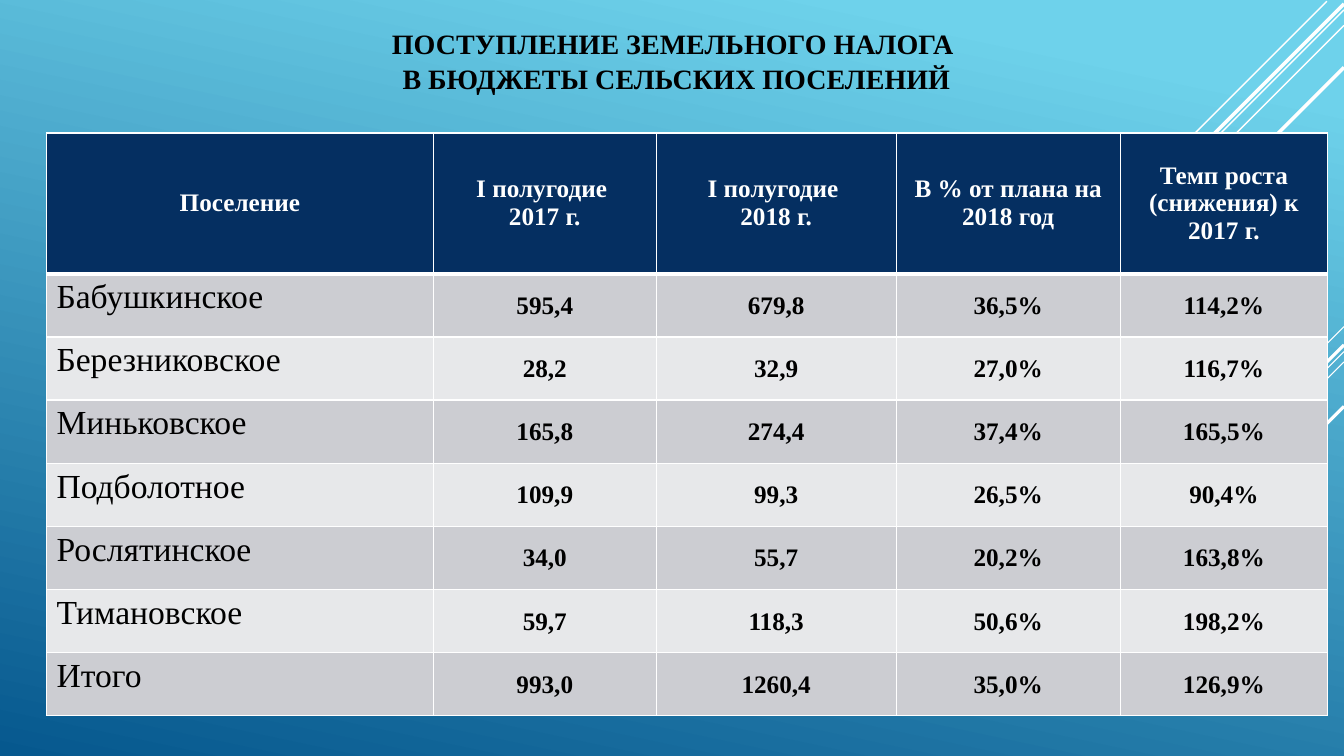
"""Build the slide on land tax receipts of rural settlements."""
import lxml.etree
import pptx
import pptx.dml.color
import pptx.enum.shapes
import pptx.enum.text
import pptx.oxml.ns
import pptx.util

Cm = pptx.util.Cm
Pt = pptx.util.Pt
Align = pptx.enum.text.PP_ALIGN
Anchor = pptx.enum.text.MSO_ANCHOR
qn = pptx.oxml.ns.qn

COLORS = {
    "sky": "6ED2EB",
    "sea": "06588E",
    "header": "052F61",
    "odd": "CCCDD2",
    "even": "E7E8EA",
    "white": "FFFFFF",
    "black": "000000",
}


def rgb(name):
    return pptx.dml.color.RGBColor.from_string(COLORS[name])


def write(frame, text, size=18, color="black", bold=True, align=Align.CENTER, spacing=1.0):
    for index, line in enumerate(text.split("\n")):
        para = frame.add_paragraph() if index else frame.paragraphs[0]
        para.alignment = align
        para.line_spacing = spacing
        span = para.add_run()
        span.text = line
        span.font.name = "Times New Roman"
        span.font.size = Pt(size)
        span.font.bold = bold
        span.font.color.rgb = rgb(color)


deck = pptx.Presentation()
deck.slide_width = Cm(33.86)
deck.slide_height = Cm(19.05)
page = deck.slides.add_slide(deck.slide_layouts[5])

backdrop = page.background.fill
backdrop.gradient()
backdrop.gradient_angle = 258
for stop, (position, color) in zip(backdrop.gradient_stops, [(0.1, "sky"), (1, "sea")]):
    stop.position = position
    stop.color.rgb = rgb(color)

# left end is always reached at 45 degrees
rays = [
    (33.86, 8.23, 2.54, 0.75),
    (33.86, 8.86, 8.28, 0.75),
    (33.86, 9.12, 5.26, 0.75),
    (33.86, 8.69, 4.85, 2.25),
    (33.86, 10.24, 3.53, 2.25),
    (33.43, 0.03, 10.58, 1),
    (33.86, 0.25, 16.89, 1),
    (33.86, 0.64, 13.77, 1),
    (33.86, 0.1, 13.48, 2.5),
    (33.86, 1.7, 12.07, 2.5),
]
for x, y, run, width in rays:
    ray = page.shapes.add_connector(
        pptx.enum.shapes.MSO_CONNECTOR.STRAIGHT, Cm(x), Cm(y), Cm(x - run), Cm(y + run)
    )
    ray.line.color.rgb = rgb("white")
    ray.line.width = Pt(width)
    lxml.etree.SubElement(ray._element.spPr, qn("a:effectLst"))

title = page.shapes.title
title.left, title.top, title.width, title.height = Cm(4.34), Cm(1.47), Cm(25.4), Cm(1.9)
title.text_frame.auto_size = pptx.enum.text.MSO_AUTO_SIZE.NONE
title.text_frame.word_wrap = True
title.text_frame.vertical_anchor = Anchor.BOTTOM
title.text_frame.margin_bottom = Cm(0.97)
write(
    title.text_frame,
    "ПОСТУПЛЕНИЕ ЗЕМЕЛЬНОГО НАЛОГА \nВ БЮДЖЕТЫ СЕЛЬСКИХ ПОСЕЛЕНИЙ",
    size=20,
    spacing=1.05,
)

receipts = [
    ("Поселение", "I полугодие \n2017 г.", "I полугодие \n2018 г.",
     "В % от плана на 2018 год", "Темп роста (снижения) к 2017 г."),
    ("Бабушкинское", "595,4", "679,8", "36,5%", "114,2%"),
    ("Березниковское", "28,2", "32,9", "27,0%", "116,7%"),
    ("Миньковское", "165,8", "274,4", "37,4%", "165,5%"),
    ("Подболотное", "109,9", "99,3", "26,5%", "90,4%"),
    ("Рослятинское", "34,0", "55,7", "20,2%", "163,8%"),
    ("Тимановское", "59,7", "118,3", "50,6%", "198,2%"),
    ("Итого", "993,0", "1260,4", "35,0%", "126,9%"),
]
column_widths = [9.75, 5.61, 6.05, 5.64, 5.23]
row_heights = [3.55] + [1.59] * 7

table = page.shapes.add_table(
    len(receipts), len(column_widths), Cm(1.17), Cm(3.35),
    Cm(sum(column_widths)), Cm(sum(row_heights)),
).table
for column, width in zip(table.columns, column_widths):
    column.width = Cm(width)
for row, height in zip(table.rows, row_heights):
    row.height = Cm(height)

for r, values in enumerate(receipts):
    for c, text in enumerate(values):
        cell = table.cell(r, c)
        cell.fill.solid()
        cell.vertical_anchor = Anchor.MIDDLE
        if r == 0:
            cell.fill.fore_color.rgb = rgb("header")
            write(cell.text_frame, text, color="white")
        else:
            cell.fill.fore_color.rgb = rgb("odd" if r % 2 else "even")
            if c == 0:
                cell.vertical_anchor = Anchor.TOP
                write(cell.text_frame, text, size=24, bold=False, align=Align.LEFT)
            else:
                cell.margin_left = cell.margin_right = cell.margin_top = Cm(0.03)
                cell.margin_bottom = 0
                write(cell.text_frame, text)
        borders = [("L", 1), ("R", 1), ("T", 3 if r == 1 else 1), ("B", 1 if r else 3)]
        for index, (side, width) in enumerate(borders):
            border = lxml.etree.Element(qn("a:ln" + side), w=str(Pt(width)))
            fill = lxml.etree.SubElement(border, qn("a:solidFill"))
            lxml.etree.SubElement(fill, qn("a:srgbClr"), val=COLORS["white"])
            cell._tc.get_or_add_tcPr().insert(index, border)

deck.save("out.pptx")
